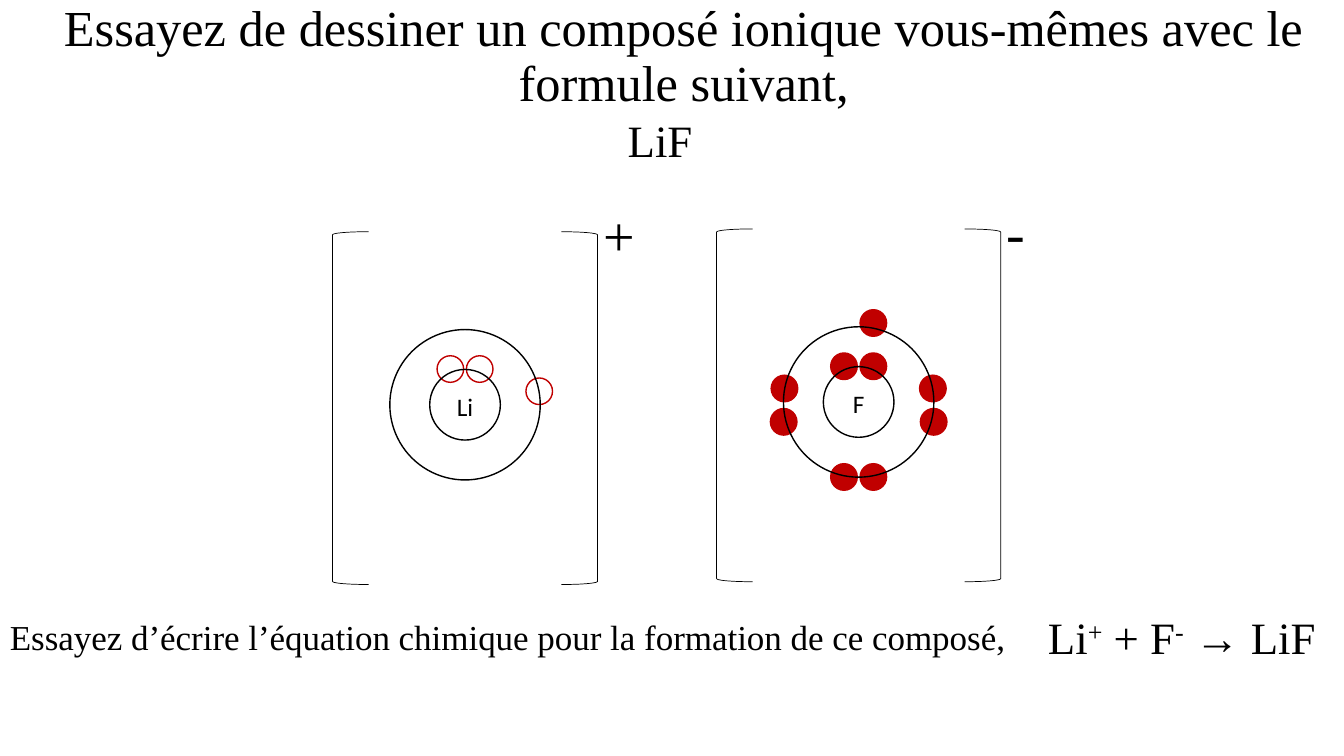
from pptx import Presentation
from pptx.dml.color import RGBColor
from pptx.enum.shapes import MSO_SHAPE as Shape
from pptx.enum.text import MSO_ANCHOR as Anchor, PP_ALIGN as Align
from pptx.util import Cm, Pt

BLACK = RGBColor(0, 0, 0)
WHITE = RGBColor(255, 255, 255)
RED = RGBColor(192, 0, 0)
SERIF, SANS = "Times New Roman", "Calibri"

# Sizes in cm
NUCLEUS, SHELL, ELECTRON, BRACKET = 1.78, 3.79, 0.67, 0.91

# Electron centres measured from the centre of the atom, in cm
INNER = [(-0.37, -0.9), (0.37, -0.9)]
LI_ELECTRONS = INNER + [(1.87, -0.34)]
F_ELECTRONS = INNER + [(0.37, 1.89), (1.87, -0.34), (-1.89, 0.5), (-0.37, 1.89),
                       (1.89, 0.5), (0.37, -1.99), (-1.87, -0.34)]


def add_text(s, box, runs, size, name=SERIF, wrap=False, anchor=Anchor.TOP, **para):
    """Place one paragraph; runs are (text, is_superscript) pairs."""
    tf = s.shapes.add_textbox(*map(Cm, box)).text_frame
    tf.word_wrap, tf.vertical_anchor = wrap, anchor
    p = tf.paragraphs[0]
    for key, value in para.items():
        setattr(p, key, value)
    for text, raised in runs:
        r = p.add_run()
        r.text = text
        for key, value in {"size": Pt(size), "name": name}.items():
            setattr(r.font, key, value)
        r.font.color.rgb = BLACK
        if raised:
            r._r.get_or_add_rPr().set("baseline", "30000")


def add_outline(s, kind, box, line=BLACK, weight=1, fill=None):
    sp = s.shapes.add_shape(kind, *map(Cm, box))
    sp.shadow.inherit = False
    sp.line.color.rgb, sp.line.width = line, Pt(weight)
    if fill is None:
        sp.fill.background()
    else:
        sp.fill.solid()
        sp.fill.fore_color.rgb = fill


def add_circle(s, cx, cy, size, **style):
    add_outline(s, Shape.OVAL, (cx - size / 2, cy - size / 2, size, size), **style)


def add_ion(s, box, symbol, charge, charge_width, electrons, fill):
    left, top, width, height = box
    cx, cy = left + width / 2, top + 4.36

    # Symbol, electrons and shells
    add_text(s, (cx - NUCLEUS / 2, cy - 0.46, NUCLEUS, 1.02), [(symbol, False)], 18, SANS,
             wrap=True, alignment=Align.CENTER)
    for dx, dy in electrons:
        add_circle(s, cx + dx, cy + dy, ELECTRON, line=RED, fill=fill)
    for size in (NUCLEUS, SHELL):
        add_circle(s, cx, cy, size)

    # Brackets and charge
    right = left + width
    for kind, x in ((Shape.LEFT_BRACKET, left), (Shape.RIGHT_BRACKET, right - BRACKET)):
        add_outline(s, kind, (x, top, BRACKET, height), weight=0.5)
    add_text(s, (right - 0.1, top - 0.92, charge_width, 1.96), [(charge, False)], 40)


def add_heading(s, box):
    left, top, width, height = box
    centred = {"wrap": True, "alignment": Align.CENTER, "line_spacing": 0.9}
    add_text(s, (left, top, width, height),
             [("Essayez de dessiner un composé ionique vous-mêmes avec le formule suivant,", False)],
             36, anchor=Anchor.MIDDLE, **centred)
    add_text(s, (left + 1.42, top + 2.57, 29.21, 1.88), [("LiF", False)], 32, **centred)


def add_equation(s, box):
    left, top, width, height = box
    add_text(s, (left, top + 0.15, 25.7, 1.32),
             [("Essayez d’écrire l’équation chimique pour la formation de ce composé,", False)], 25)
    add_text(s, (left + 26.16, top, width - 26.16, height),
             [("Li", False), ("+", True), (" + F", False), ("-", True), (" → LiF", False)], 32)


def main():
    prs = Presentation()
    prs.slide_width, prs.slide_height = Cm(33.87), Cm(19.05)
    s = prs.slides.add_slide(prs.slide_layouts[6])
    add_heading(s, (0.61, 0.3, 33.25, 2.31))
    add_ion(s, (8.38, 5.84, 6.68, 8.89), "Li", "+", 1.32, LI_ELECTRONS, WHITE)
    add_ion(s, (18.06, 5.77, 7.16, 8.89), "F", "-", 0.99, F_ELECTRONS, RED)
    add_equation(s, (0, 15.24, 33.55, 1.62))
    prs.save("out.pptx")


if __name__ == "__main__":
    main()
